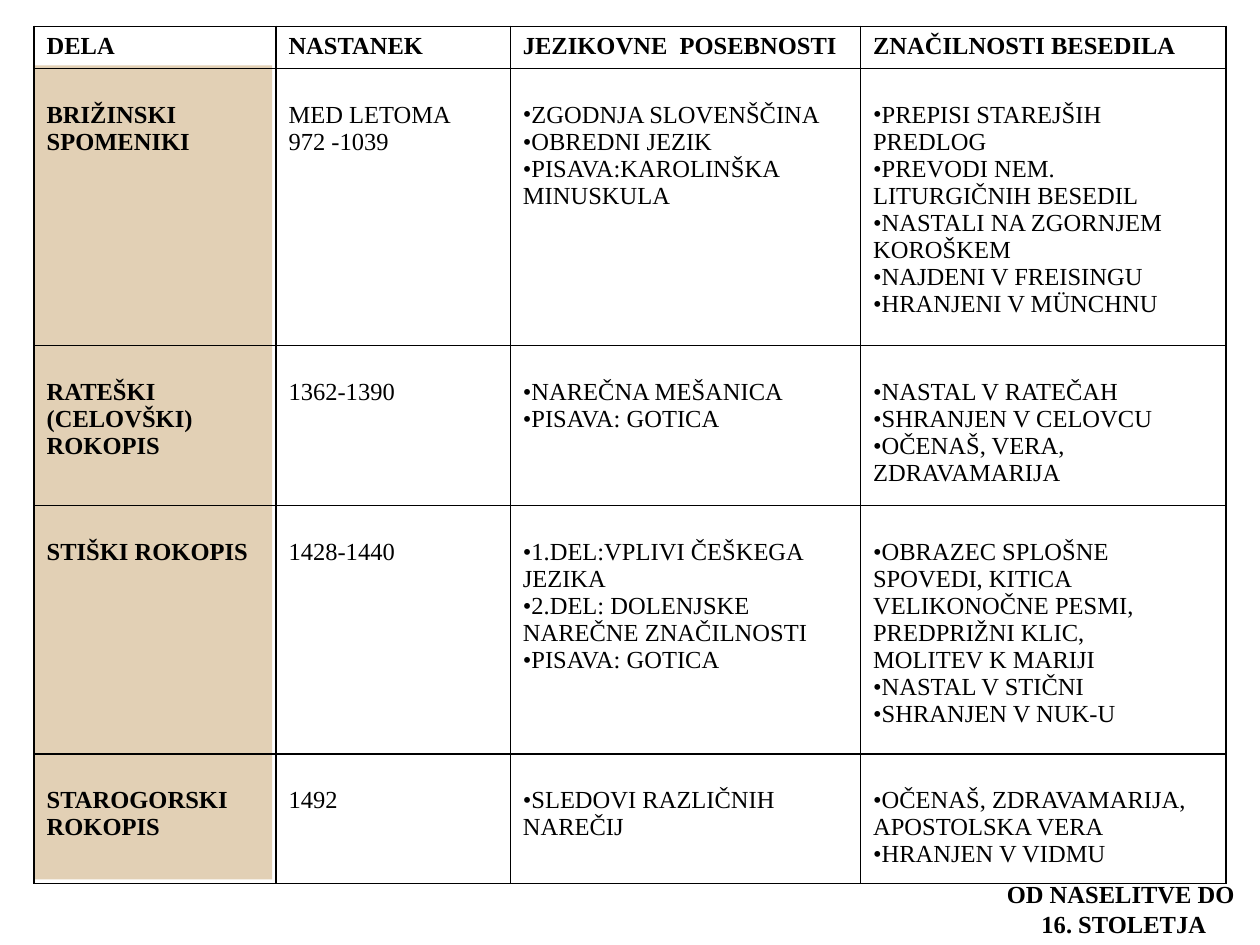
from pptx import Presentation
from pptx.dml.color import RGBColor
from pptx.enum.shapes import MSO_SHAPE as Shape
from pptx.enum.text import PP_ALIGN as Align
from pptx.oxml import parse_xml
from pptx.oxml.ns import nsdecls, qn
from pptx.util import Inches, Pt

BLACK = RGBColor(0x00, 0x00, 0x00)
SAND = RGBColor(0xD5, 0xBA, 0x93)
FONT = "Times New Roman"
PLAIN = "{2D5ABB26-0587-4C30-8999-92F81FD0307C}"
COLS = [1.92, 1.86, 2.78, 2.9]
ROWS = [0.33, 2.2, 1.27, 1.97, 1.03]
CELLS = [
    ["DELA", "NASTANEK", "JEZIKOVNE  POSEBNOSTI", "ZNAČILNOSTI BESEDILA"],
    ["BRIŽINSKI SPOMENIKI", "MED LETOMA \n972 -1039",
     "•ZGODNJA SLOVENŠČINA\n•OBREDNI JEZIK\n•PISAVA:KAROLINŠKA MINUSKULA",
     "•PREPISI STAREJŠIH PREDLOG\n•PREVODI NEM. LITURGIČNIH BESEDIL\n"
     "•NASTALI NA ZGORNJEM KOROŠKEM\n•NAJDENI V FREISINGU\n"
     "•HRANJENI V MÜNCHNU"],
    ["RATEŠKI (CELOVŠKI) ROKOPIS", "1362-1390",
     "•NAREČNA MEŠANICA\n•PISAVA: GOTICA",
     "•NASTAL V RATEČAH\n•SHRANJEN V CELOVCU\n•OČENAŠ, VERA, ZDRAVAMARIJA"],
    ["STIŠKI ROKOPIS", "1428-1440",
     "•1.DEL:VPLIVI ČEŠKEGA JEZIKA\n"
     "•2.DEL: DOLENJSKE NAREČNE ZNAČILNOSTI\n•PISAVA: GOTICA",
     "•OBRAZEC SPLOŠNE SPOVEDI, KITICA VELIKONOČNE PESMI, PREDPRIŽNI KLIC,\n"
     "MOLITEV K MARIJI\n•NASTAL V STIČNI\n•SHRANJEN V NUK-U"],
    ["STAROGORSKI ROKOPIS", "1492", "•SLEDOVI RAZLIČNIH NAREČIJ",
     "•OČENAŠ, ZDRAVAMARIJA, APOSTOLSKA VERA\n•HRANJEN V VIDMU"],
]


def add_bullet(para):
    props = para._p.get_or_add_pPr()
    props.set("marL", "0")
    props.set("indent", "0")
    space = nsdecls("a")
    props.append(parse_xml(f'<a:buFont {space} typeface="{FONT}"/>'))
    props.append(parse_xml(f'<a:buChar {space} char="•"/>'))


def write(frame, text, bold=False, align=Align.LEFT):
    for i, line in enumerate(text.split("\n")):
        para = frame.add_paragraph() if i else frame.paragraphs[0]
        para.text = line.removeprefix("•")
        para.alignment = align
        if line.startswith("•"):
            add_bullet(para)
        for font in [para.font] + [run.font for run in para.runs]:
            font.name = FONT
            font.size = Pt(14)
            font.bold = bold
            font.color.rgb = BLACK


def frame_cell(cell):
    cell.fill.background()
    props = cell._tc.get_or_add_tcPr()
    for i, side in enumerate("LRTB"):
        props.insert(i, parse_xml(
            f'<a:ln{side} {nsdecls("a")} w="{Pt(1)}"><a:solidFill>'
            f'<a:srgbClr val="{BLACK}"/></a:solidFill></a:ln{side}>'))


def add_band(slide):
    band = slide.shapes.add_shape(
        Shape.RECTANGLE, Inches(0.27), Inches(0.52), Inches(1.89), Inches(6.46))
    band.shadow.inherit = False
    band.line.fill.background()
    band.fill.solid()
    band.fill.fore_color.rgb = SAND
    color = band._element.spPr.find(".//" + qn("a:srgbClr"))
    color.append(parse_xml(f'<a:alpha {nsdecls("a")} val="68000"/>'))


def add_label(slide):
    box = slide.shapes.add_textbox(
        Inches(7.84), Inches(6.93), Inches(2.16), Inches(0.57))
    box.text_frame.word_wrap = False
    write(box.text_frame, "OD NASELITVE DO \v16. STOLETJA",
          bold=True, align=Align.CENTER)


def add_grid(slide):
    grid = slide.shapes.add_table(
        len(ROWS), len(COLS), Inches(0.27), Inches(0.21),
        Inches(sum(COLS)), Inches(sum(ROWS))).table
    grid.first_row = grid.horz_banding = False
    grid._tbl.tblPr.find(qn("a:tableStyleId")).text = PLAIN
    for col, width in zip(grid.columns, COLS):
        col.width = Inches(width)
    for r, height in enumerate(ROWS):
        grid.rows[r].height = Inches(height)
        for c, text in enumerate(CELLS[r]):
            cell = grid.cell(r, c)
            cell.margin_top = Inches(0.26 if r else 0.05)
            justify = r == 0 or c == 1 or (c == 0 and r > 1)
            write(cell.text_frame, text, bold=r == 0 or c == 0,
                  align=Align.JUSTIFY if justify else Align.LEFT)
            frame_cell(cell)


def main():
    deck = Presentation()
    deck.slide_width = Inches(10)
    deck.slide_height = Inches(7.5)
    slide = deck.slides.add_slide(deck.slide_layouts[6])
    add_band(slide)
    add_label(slide)
    add_grid(slide)
    deck.save("out.pptx")


if __name__ == "__main__":
    main()
